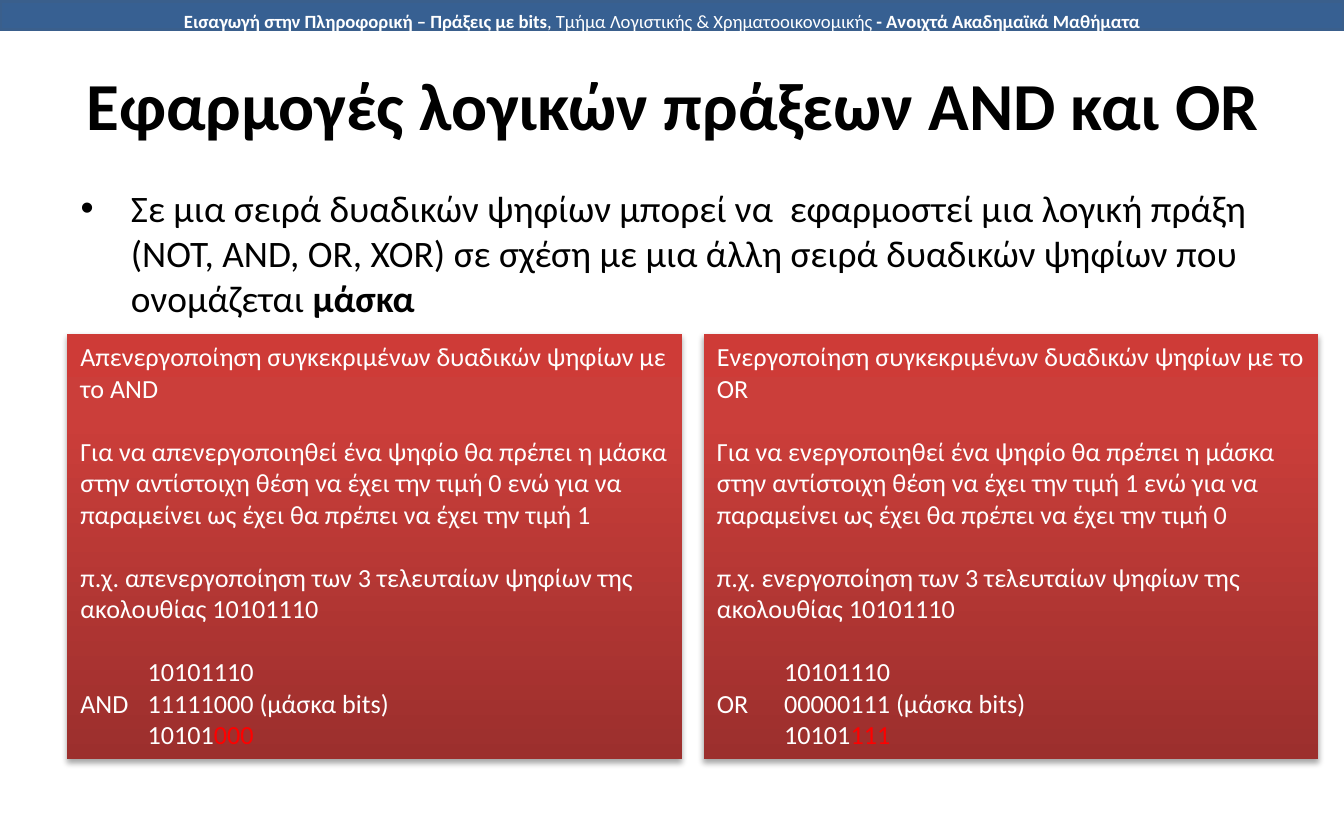
from dataclasses import dataclass

from lxml import etree
from pptx import Presentation
from pptx.dml.color import RGBColor
from pptx.enum.shapes import MSO_SHAPE
from pptx.enum.text import MSO_ANCHOR, MSO_AUTO_SIZE, PP_ALIGN
from pptx.oxml import parse_xml
from pptx.oxml.ns import qn
from pptx.util import Cm, Pt

RECT = MSO_SHAPE.RECTANGLE
TOP, MIDDLE = MSO_ANCHOR.TOP, MSO_ANCHOR.MIDDLE
LEFT, CENTER = PP_ALIGN.LEFT, PP_ALIGN.CENTER
FIXED = MSO_AUTO_SIZE.NONE


@dataclass(frozen=True)
class Theme:
    font: str = "Calibri"
    bar: str = "376092"
    edge: str = "3A5F8C"
    ink: str = "000000"
    paper: str = "FFFFFF"
    mark: str = "FF0000"
    stops: tuple = ((0, "9C2F2D"), (80, "CB3E3A"), (100, "CE3B37"))
    head: int = 10
    title: int = 36
    body: int = 20
    card: int = 14
    gap: int = 17


theme = Theme()


def write(par, text, size=theme.card, color=theme.paper, bold=False):
    run = par.add_run()
    run.text = text
    run.font.name = theme.font
    run.font.size = Pt(size)
    run.font.bold = bold
    run.font.color.rgb = RGBColor.from_string(color)


def place(shape, left, top, width, height, anchor=TOP):
    shape.left, shape.top = Cm(left), Cm(top)
    shape.width, shape.height = Cm(width), Cm(height)
    frame = shape.text_frame
    frame.word_wrap = True
    frame.auto_size = FIXED
    frame.vertical_anchor = anchor
    return frame


deck = Presentation()
deck.slide_width, deck.slide_height = Cm(25.4), Cm(15.88)
slide = deck.slides.add_slide(deck.slide_layouts[1])
shapes = slide.shapes

bar = shapes.add_shape(RECT, 0, Cm(0.03), deck.slide_width, Cm(0.53))
bar.shadow.inherit = False
bar.fill.solid()
bar.fill.fore_color.rgb = RGBColor.from_string(theme.bar)
bar.line.color.rgb = RGBColor.from_string(theme.edge)
bar.line.width = Pt(2)

head = place(shapes.add_textbox(0, 0, 0, 0), 0.71, -0.15, 23.6, 0.89)
par = head.paragraphs[0]
par.alignment = CENTER
par.line_spacing = 1.5
for text, bold in (
    ("Εισαγωγή στην Πληροφορική – Πράξεις με bits", True),
    (", Τμήμα Λογιστικής & Χρηματοοικονομικής ", False),
    ("- Ανοιχτά Ακαδημαϊκά Μαθήματα", True),
):
    write(par, text, size=theme.head, bold=bold)

title = place(shapes.title, 0.51, 0.64, 24.41, 2.64, MIDDLE)
par = title.paragraphs[0]
par.alignment = CENTER
write(par, "Εφαρμογές λογικών πράξεων AND και OR",
      size=theme.title, color=theme.ink, bold=True)

body = place(slide.placeholders[1], 1.27, 3.38, 22.86, 13.72)
par = body.paragraphs[0]
par.space_before = Pt(0)
props = par._p.get_or_add_pPr()
props.set("marL", str(Cm(0.95)))
props.set("indent", str(-Cm(0.95)))
etree.SubElement(props, qn("a:buFont")).set("typeface", "Arial")
etree.SubElement(props, qn("a:buChar")).set("char", "•")
for text, bold in (
    ("Σε μια σειρά δυαδικών ψηφίων μπορεί να  εφαρμοστεί μια λογική πράξη "
     "(NOT, AND, OR, XOR) σε σχέση με μια άλλη σειρά δυαδικών ψηφίων που "
     "ονομάζεται ", False),
    ("μάσκα", True),
):
    write(par, text, size=theme.body, color=theme.ink, bold=bold)

space = 'xmlns:a="http://schemas.openxmlformats.org/drawingml/2006/main"'
stops = "".join(
    f'<a:gs pos="{pos * 1000}"><a:srgbClr val="{color}"/></a:gs>'
    for pos, color in theme.stops
)
blend = (f'<a:gradFill {space} rotWithShape="1"><a:gsLst>{stops}</a:gsLst>'
         '<a:lin ang="16200000" scaled="0"/></a:gradFill>')
shade = (f'<a:outerShdw {space} blurRad="{Pt(3.1)}" dist="{Pt(1.8)}" '
         'dir="5400000" rotWithShape="0"><a:srgbClr val="000000">'
         '<a:alpha val="35000"/></a:srgbClr></a:outerShdw>')

cards = (
    ("AND", "Απενεργοποίηση", "απενεργοποιηθεί", "απενεργοποίηση",
     0, 1, "11111000", "000"),
    ("OR", "Ενεργοποίηση", "ενεργοποιηθεί", "ενεργοποίηση",
     1, 0, "00000111", "111"),
)
for col, (gate, noun, verb, act, put, keep, mask, tail) in enumerate(cards):
    card = shapes.add_shape(RECT, 0, 0, 0, 0)
    frame = place(card, 1.27 + col * 12.03, 6.32, 11.62, 8.03)
    card.fill.background()
    card.line.fill.background()
    card.shadow.inherit = False
    look = card._element.spPr
    look.replace(look.find(qn("a:noFill")), parse_xml(blend))
    look.find(qn("a:effectLst")).append(parse_xml(shade))

    lines = (
        (f"{noun} συγκεκριμένων δυαδικών ψηφίων με το {gate}", 0),
        (f"Για να {verb} ένα ψηφίο θα πρέπει η μάσκα στην αντίστοιχη θέση "
         f"να έχει την τιμή {put} ενώ για να παραμείνει ως έχει θα πρέπει "
         f"να έχει την τιμή {keep}", theme.gap),
        (f"π.χ. {act} των 3 τελευταίων ψηφίων της ακολουθίας 10101110",
         theme.gap),
        ("\t10101110", theme.gap),
        (f"{gate}\t{mask} (μάσκα bits)", 0),
        ("\t10101", 0),
    )
    for row, (text, gap) in enumerate(lines):
        par = frame.add_paragraph() if row else frame.paragraphs[0]
        par.alignment = LEFT
        par.space_before = Pt(gap)
        write(par, text)
    write(par, tail, color=theme.mark)

deck.save("out.pptx")
